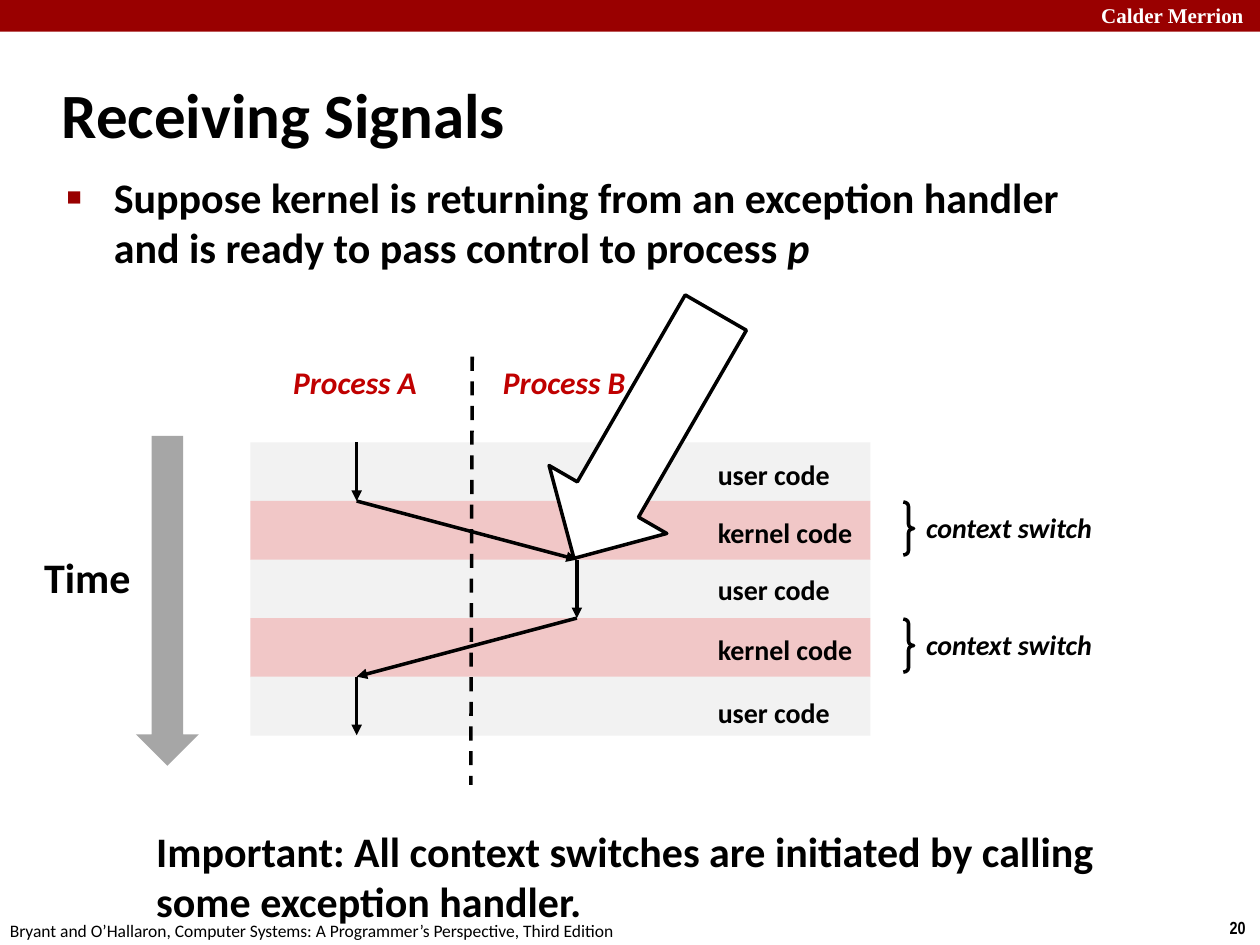
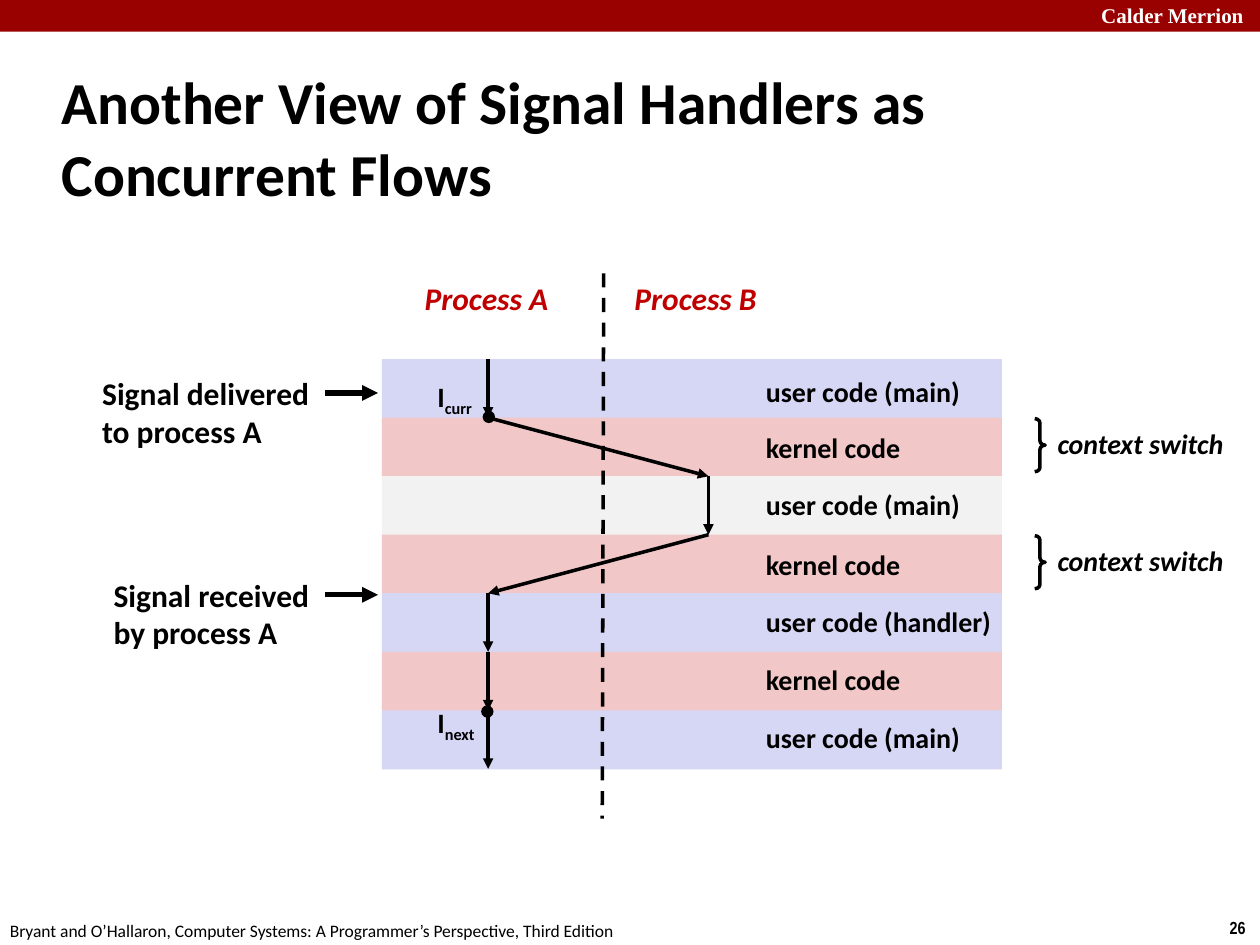
from lxml import etree
from pptx import Presentation
from pptx.dml.color import RGBColor
from pptx.enum.dml import MSO_LINE
from pptx.enum.shapes import MSO_CONNECTOR, MSO_SHAPE
from pptx.enum.text import MSO_ANCHOR, MSO_AUTO_SIZE, PP_ALIGN
from pptx.oxml.ns import qn
from pptx.util import Cm, Pt

RECTANGLE, ELLIPSE = MSO_SHAPE.RECTANGLE, MSO_SHAPE.OVAL
DOWN_ARROW, RIGHT_BRACE = MSO_SHAPE.DOWN_ARROW, MSO_SHAPE.RIGHT_BRACE
STRAIGHT, DASH = MSO_CONNECTOR.STRAIGHT, MSO_LINE.DASH
MIDDLE, LEFT, NO_FIT = MSO_ANCHOR.MIDDLE, PP_ALIGN.LEFT, MSO_AUTO_SIZE.NONE

BLACK = RGBColor(0x00, 0x00, 0x00)
WHITE = RGBColor(0xFF, 0xFF, 0xFF)
DARK_RED = RGBColor(0x99, 0x00, 0x00)
HEADING_RED = RGBColor(0xC0, 0x00, 0x00)
KERNEL_PINK = RGBColor(0xF1, 0xC7, 0xC7)
USER_GREY = RGBColor(0xF2, 0xF2, 0xF2)
MAIN_LILAC = RGBColor(0xD6, 0xD6, 0xF5)
TIME_GREY = RGBColor(0xA6, 0xA6, 0xA6)

# Diagram measures in centimetres; x values count from its left edge
BAND_WIDTH, BAND_HEIGHT, BAND_STEP = 12.5, 1.19, 1.18
HEADING_RISE = 1.73
PROCESS_A, PROCESS_B = 2.14, 6.58
FLOW = [(PROCESS_A, 0), (PROCESS_A, 1), (PROCESS_B, 2), (PROCESS_B, 3),
        (PROCESS_A, 4), (PROCESS_A, 5), (PROCESS_A, 6), (PROCESS_A, 7)]
LABEL_WIDTHS = {"user code": 2.9, "kernel code": 3.4,
                "user code (main)": 4.6, "user code (handler)": 5.3}

# Bands: label, fill, drop of the label below the top of its band
SLIDES = [
    {"title": "Receiving Signals", "title_top": 1.22, "title_size": 36,
     "number": "20", "layout": 1, "left": 5.05, "top": 8.92, "label_x": 9.17,
     "bands": [("user code", USER_GREY, 0.18),
               ("kernel code", KERNEL_PINK, 0.16),
               ("user code", USER_GREY, 0.13),
               ("kernel code", KERNEL_PINK, 0.17),
               ("user code", USER_GREY, 0.26)],
     "signal_arrows": []},
    {"title": "Another View of Signal Handlers as Concurrent Flows",
     "title_top": 1.7, "title_size": 34,
     "number": "26", "layout": 5, "left": 7.7, "top": 7.24, "label_x": 7.49,
     "bands": [("user code (main)", MAIN_LILAC, 0.18),
               ("kernel code", KERNEL_PINK, 0.14),
               ("user code (main)", USER_GREY, 0.1),
               ("kernel code", KERNEL_PINK, 0.14),
               ("user code (handler)", MAIN_LILAC, 0.11),
               ("kernel code", KERNEL_PINK, 0.1),
               ("user code (main)", MAIN_LILAC, 0.08)],
     "signal_arrows": [7.92, 11.99]},
]


def add_text(slide, text, left, top, width, height, size, color=BLACK,
             bold=True, italic=False, font_name="Calibri", inset=0.25):
    box = slide.shapes.add_textbox(Cm(left), Cm(top), Cm(width), Cm(height))
    frame = box.text_frame
    frame.word_wrap = True
    frame.margin_left = frame.margin_right = Cm(inset)
    frame.text = text
    for paragraph in frame.paragraphs:
        font = paragraph.runs[0].font
        font.name, font.size, font.color.rgb = font_name, Pt(size), color
        font.bold, font.italic = bold, italic
    return box


def add_shape(slide, kind, left, top, width, height, fill=None, line=False):
    shape = slide.shapes.add_shape(kind, Cm(left), Cm(top), Cm(width), Cm(height))
    shape.shadow.inherit = False
    if fill is None:
        shape.fill.background()
    else:
        shape.fill.solid()
        shape.fill.fore_color.rgb = fill
    if line:
        shape.line.color.rgb, shape.line.width = BLACK, Pt(2)
    else:
        shape.line.fill.background()
    return shape


presentation = Presentation()
presentation.slide_width, presentation.slide_height = Cm(25.4), Cm(19.05)
slides = []

for content in SLIDES:
    slide = presentation.slides.add_slide(
        presentation.slide_layouts[content["layout"]])
    slides.append(slide)
    left, top, bands = content["left"], content["top"], content["bands"]

    title = slide.shapes.title
    title.left, title.top = Cm(0.99), Cm(content["title_top"])
    title.width, title.height = Cm(21.08), Cm(2.11)
    frame = title.text_frame
    frame.text = content["title"]
    frame.auto_size, frame.vertical_anchor = NO_FIT, MIDDLE
    frame.paragraphs[0].alignment = LEFT
    font = frame.paragraphs[0].runs[0].font
    font.name, font.size, font.bold = "Calibri", Pt(content["title_size"]), True
    font.color.rgb = BLACK
    add_text(slide, content["number"], 24.66, 18.36, 0.74, 0.69, 10,
             font_name="Arial Narrow", inset=0.13)

    for row, (label, fill, drop) in enumerate(bands):
        band_top = top + row * BAND_STEP
        add_shape(slide, RECTANGLE, left, band_top, BAND_WIDTH, BAND_HEIGHT, fill)
        add_text(slide, label, left + content["label_x"], band_top + drop,
                 LABEL_WIDTHS[label], 0.94, 16)
    for heading, heading_x in [("Process A", 0.61), ("Process B", 4.84)]:
        add_text(slide, heading, left + heading_x, top - HEADING_RISE, 3.2, 1.02,
                 18, HEADING_RED, italic=True)
    for row in (1, 3):
        switch_top = top + row * BAND_STEP + 0.02
        brace = add_shape(slide, RIGHT_BRACE, left + 13.16, switch_top, 0.21, 1.07,
                          line=True)
        brace.adjustments[0] = 0.417
        add_text(slide, "context switch", left + 13.37, switch_top + 0.04, 4, 0.94,
                 16, italic=True)

    # Lines: x and y of both ends, width in points, dashed or with an arrowhead
    bottom = top + len(bands) * BAND_STEP
    lines = [(left + 4.47, top - HEADING_RISE, left + 4.44, bottom + 1, 2, True)]
    flow = FLOW[:len(bands) + 1]
    for (x1, row1), (x2, row2) in zip(flow, flow[1:]):
        lines.append((left + x1, top + row1 * BAND_STEP,
                      left + x2, top + row2 * BAND_STEP, 2, False))
    for y in content["signal_arrows"]:
        lines.append((6.55, y, 7.62, y, 3, False))
    for x1, y1, x2, y2, width, dashed in lines:
        connector = slide.shapes.add_connector(STRAIGHT, Cm(x1), Cm(y1), Cm(x2), Cm(y2))
        connector.line.color.rgb, connector.line.width = BLACK, Pt(width)
        if dashed:
            connector.line.dash_style = DASH
        else:
            etree.SubElement(connector.get_or_add_ln(), qn("a:tailEnd"), type="triangle")
        etree.SubElement(connector.element.spPr, qn("a:effectLst"))

receiving, concurrent = slides

# Header band, header and footer are drawn once and moved to the slide master
master_parts = [
    add_shape(receiving, RECTANGLE, 0, 0, 25.4, 0.64, DARK_RED),
    add_text(receiving, "Calder Merrion", 21.95, -0.08, 3.45, 0.76, 12, WHITE,
             font_name="Times New Roman"),
    add_text(receiving, "Bryant and O’Hallaron, Computer Systems: "
             "A Programmer’s Perspective, Third Edition",
             -0.05, 18.42, 13.2, 0.69, 10, bold=False),
]
for shape_id, part in enumerate(master_parts, start=101):
    part.element.nvSpPr.cNvPr.set("id", str(shape_id))
    presentation.slide_master.shapes.element.append(part.element)

# Receiving Signals
body = receiving.placeholders[1]
body.left, body.top, body.width, body.height = Cm(1.09), Cm(3.33), Cm(21.95), Cm(3.02)
body.text_frame.auto_size = NO_FIT
paragraph = body.text_frame.paragraphs[0]
paragraph.text = ("Suppose kernel is returning from an exception handler "
                  "and is ready to pass control to process ")
process_name = paragraph.add_run()
process_name.text = "p"
for run in paragraph.runs:
    run.font.name, run.font.size, run.font.bold = "Calibri", Pt(24), True
    run.font.color.rgb = BLACK
process_name.font.italic = True
properties = paragraph._p.get_or_add_pPr()
properties.set("marL", str(Cm(0.95)))
properties.set("indent", str(-Cm(0.95)))
bullet_color = etree.SubElement(properties, qn("a:buClr"))
etree.SubElement(bullet_color, qn("a:srgbClr"), val=str(DARK_RED))
etree.SubElement(properties, qn("a:buSzPct"), val="60000")
etree.SubElement(properties, qn("a:buChar"), char="■")

add_text(receiving, "Time", 0.64, 11, 2.5, 1.27, 24)
add_shape(receiving, DOWN_ARROW, 2.74, 8.79, 1.27, 6.65, TIME_GREY)
return_arrow = add_shape(receiving, DOWN_ARROW, 11.63, 5.92, 2.74, 5.72, WHITE, line=True)
return_arrow.adjustments[0] = 0.519
return_arrow.rotation = 30
add_text(receiving, "Important: All context switches are initiated by calling "
         "some exception handler.", 2.9, 16.51, 20.8, 2.31, 24)

# Another View of Signal Handlers
add_text(concurrent, "Signal delivered\nto process A", 1.93, 7.42, 4.6, 1.8, 18, inset=0.13)
add_text(concurrent, "Signal received\nby process A", 2.16, 11.48, 4.4, 1.8, 18, inset=0.13)
for subscript, label_top, dot_left, dot_top in [("curr", 7.52, 9.73, 8.28),
                                                ("next", 14.1, 9.7, 14.22)]:
    instruction = add_text(concurrent, "I", 8.69, label_top, 1.2, 0.94, 16, inset=0.13)
    run = instruction.text_frame.paragraphs[0].add_run()
    run.text = subscript
    run.font.name, run.font.size, run.font.bold = "Calibri", Pt(16), True
    run.font.color.rgb = BLACK
    run._r.get_or_add_rPr().set("baseline", "-25000")
    add_shape(concurrent, ELLIPSE, dot_left, dot_top, 0.25, 0.25, BLACK)

presentation.save("out.pptx")
